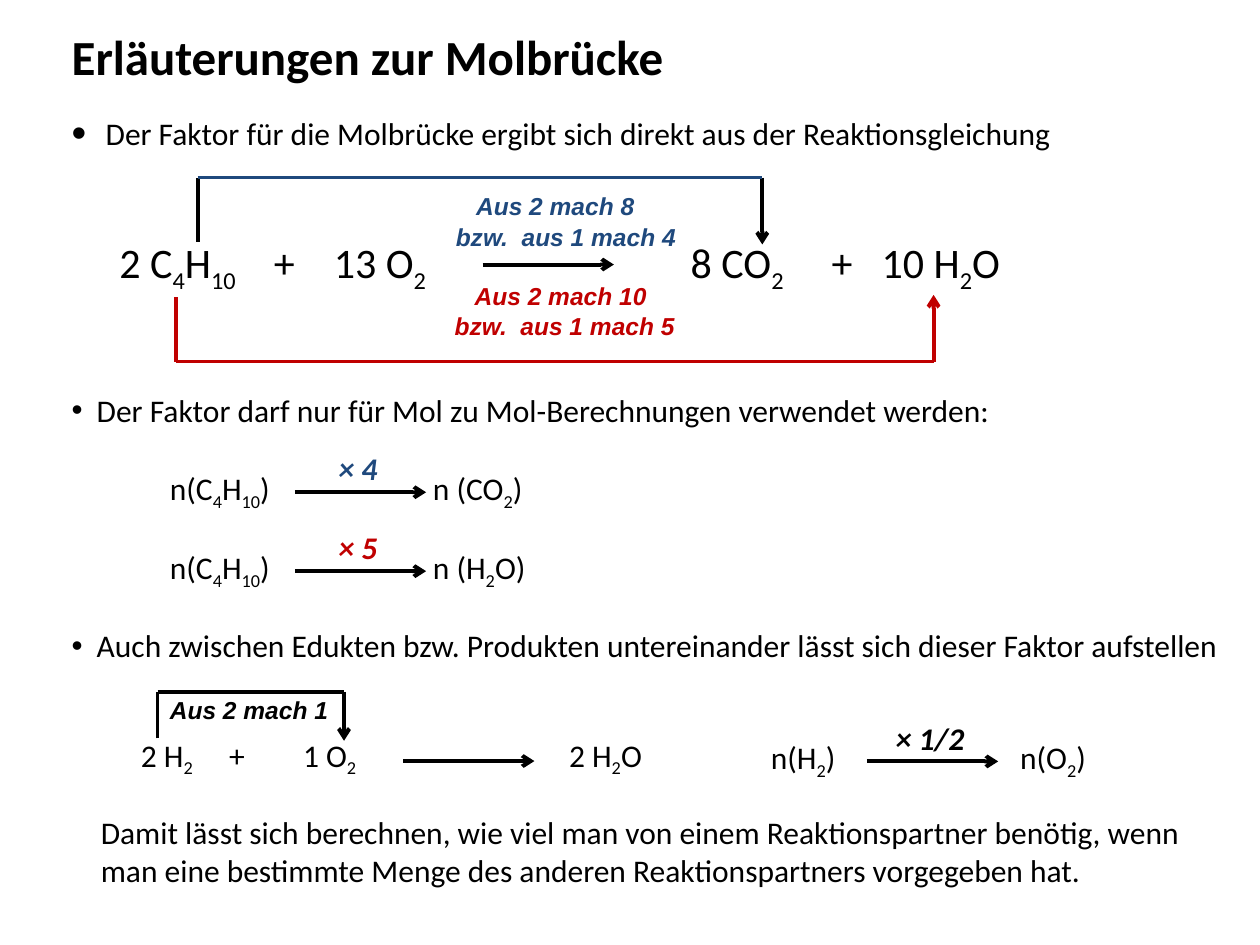
from dataclasses import dataclass

from lxml.etree import SubElement
from pptx import Presentation
from pptx.dml.color import RGBColor
from pptx.enum.shapes import MSO_CONNECTOR
from pptx.enum.text import MSO_ANCHOR, MSO_AUTO_SIZE, PP_ALIGN
from pptx.oxml.ns import qn
from pptx.util import Pt


@dataclass(frozen=True)
class Theme:
    black: RGBColor = RGBColor(0x00, 0x00, 0x00)
    blue: RGBColor = RGBColor(0x1F, 0x49, 0x7D)
    red: RGBColor = RGBColor(0xC0, 0x00, 0x00)
    text_font: str = "Calibri"
    label_font: str = "Arial"
    title_size: int = 28
    equation_size: int = 24
    text_size: int = 18
    label_size: int = 14
    leg_width: float = 2.25
    bar_width: float = 2
    arrow_length: float = 75


@dataclass(frozen=True)
class Box:
    left: float
    top: float
    width: float
    height: float

    def inner(self, left, top, width, height):
        return Box(self.left + left, self.top + top, width, height)


THEME = Theme()


def text_format(size, color=THEME.black, name=THEME.text_font, bold=False, italic=False):
    return {"size": Pt(size), "color": color, "name": name, "bold": bold, "italic": italic}


TITLE = text_format(THEME.title_size, bold=True)
BODY = text_format(THEME.text_size)
EQUATION = text_format(THEME.equation_size)


def label_format(color):
    return text_format(THEME.label_size, color, THEME.label_font, True, True)


def factor_format(color):
    return text_format(THEME.text_size, color, bold=True, italic=True)


def apply_format(font, values):
    for key, value in values.items():
        if key == "color":
            font.color.rgb = value
        else:
            setattr(font, key, value)


def place(shape, box):
    for side in ("left", "top", "width", "height"):
        setattr(shape, side, Pt(getattr(box, side)))


def write(shape, lines, values, wrap=True):
    frame = shape.text_frame
    frame.word_wrap = wrap
    frame.auto_size = MSO_AUTO_SIZE.NONE
    frame.vertical_anchor = MSO_ANCHOR.TOP
    for index, line in enumerate(lines):
        para = frame.add_paragraph() if index else frame.paragraphs[0]
        para.alignment = PP_ALIGN.LEFT
        para.space_before = Pt(0)
        for position, piece in enumerate(line.split("~")):
            if piece:
                span = para.add_run()
                span.text = piece
                apply_format(span.font, values)
                if position % 2:
                    span.font._element.set("baseline", "-25000")
    return frame


def add_text(page, box, text, values, wrap=False):
    shape = page.shapes.add_textbox(Pt(0), Pt(0), Pt(1), Pt(1))
    place(shape, box)
    return write(shape, [text], values, wrap)


def add_formula(page, box, terms, stops, values):
    frame = add_text(page, box, "\t".join(terms), values, wrap=True)
    tabs = SubElement(frame.paragraphs[0]._p.get_or_add_pPr(), qn("a:tabLst"))
    for stop in stops:
        SubElement(tabs, qn("a:tab"), pos=str(Pt(stop)), algn="l")


def add_line(page, start, end, color, width=THEME.leg_width, arrow=False):
    line = page.shapes.add_connector(
        MSO_CONNECTOR.STRAIGHT, *(Pt(value) for value in (*start, *end)))
    line.line.color.rgb = color
    line.line.width = Pt(width)
    if arrow:
        SubElement(line.line._get_or_add_ln(), qn("a:tailEnd"), type="arrow")
    SubElement(line._element.spPr, qn("a:effectLst"))


def add_arrow(page, left, top):
    add_line(page, (left, top), (left + THEME.arrow_length, top), THEME.black, arrow=True)


def add_bridge(page, box, leg_color, bar_color, below=False):
    right, bottom = box.left + box.width, box.top + box.height
    bar, tip, gap = (bottom, box.top, 1.4) if below else (box.top, bottom, -1.4)
    add_line(page, (box.left, tip + gap), (box.left, bar), leg_color)
    add_line(page, (right, bar), (right, tip), leg_color, arrow=True)
    add_line(page, (box.left, bar), (right, bar), bar_color, THEME.bar_width)


def set_bullet(para, indent, percent):
    properties = para._p.get_or_add_pPr()
    properties.set("marL", str(Pt(indent)))
    properties.set("indent", str(Pt(-indent)))
    if indent:
        SubElement(properties, qn("a:buSzPct"), val=str(percent * 1000))
        SubElement(properties, qn("a:buFont"), typeface="Arial")
        SubElement(properties, qn("a:buChar"), char="•")
    else:
        SubElement(properties, qn("a:buNone"))


def add_headings(page, box):
    place(page.shapes.title, box.inner(0, 0, 357, 41))
    write(page.shapes.title, ["Erläuterungen zur Molbrücke"], TITLE)
    entries = [
        (0, 50.2, 576, 19.4, 133,
         ["Der Faktor für die Molbrücke ergibt sich direkt aus der Reaktionsgleichung"]),
        (0, 208.2, 546, 14.3, 100,
         ["Der Faktor darf nur für Mol zu Mol-Berechnungen verwendet werden:"]),
        (0, 342.8, 675, 14.3, 100,
         ["Auch zwischen Edukten bzw. Produkten untereinander lässt sich dieser Faktor aufstellen"]),
        (16.6, 449.5, 645, 0, 100,
         ["Damit lässt sich berechnen, wie viel man von einem Reaktionspartner benötig, wenn",
          "man eine bestimmte Menge des anderen Reaktionspartners vorgegeben hat."]),
    ]
    bodies = [page.placeholders[index] for index in (1, 2, 3, 4)]
    for body, (left, top, width, indent, percent, lines) in zip(bodies, entries):
        place(body, box.inner(left, top, width, 7 + 22 * len(lines)))
        for para in write(body, lines, BODY).paragraphs:
            set_bullet(para, indent, percent)


def add_reaction(page, box):
    add_formula(page, box.inner(0, 30.3, 585, 36),
                ["2 C~4~H~10~", "+", "13 O~2~", "8 CO~2~", "+", "10 H~2~O"],
                [88.2, 122.5, 326.4, 407, 435.5], EQUATION)
    labels = [
        (203.8, 4.3, 105, "Aus 2 mach 8", THEME.blue),
        (192.2, 21.6, 141, "bzw.  aus 1 mach 4", THEME.blue),
        (203, 55.5, 113, "Aus 2 mach 10", THEME.red),
        (191.5, 72.7, 141, "bzw.  aus 1 mach 5", THEME.red),
    ]
    for left, top, width, text, color in labels:
        add_text(page, box.inner(left, top, width, 24.5), text, label_format(color))
    add_arrow(page, box.left + 214.6, box.top + 49.7)
    add_bridge(page, box.inner(51.8, 0, 322.6, 38.2), THEME.black, THEME.blue)
    add_bridge(page, box.inner(39.6, 67, 432.7, 38.2), THEME.red, THEME.red, below=True)


def add_conversion(page, box, terms, stop, factor, color, arrow_left, factor_width):
    add_formula(page, box, terms, [stop], BODY)
    add_arrow(page, box.left + arrow_left, box.top + 17)
    offset = arrow_left + (THEME.arrow_length - factor_width) / 2 + 1
    add_text(page, box.inner(offset, -11, factor_width, 29), factor, factor_format(color))


def add_water_reaction(page, box):
    add_formula(page, box.inner(0, 21.5, 317, 29),
                ["2 H~2~", "+", "1 O~2~", "2 H~2~O"], [50.5, 92.7, 244.7], BODY)
    add_arrow(page, box.left + 157, box.top + 39.6)
    add_bridge(page, box.inner(16.6, 0, 106.6, 28), THEME.black, THEME.black)
    add_text(page, box.inner(16.6, -1.4, 105, 24.5), "Aus 2 mach 1", label_format(THEME.black))


def main():
    deck = Presentation()
    deck.slide_width, deck.slide_height = Pt(720), Pt(540)
    page = deck.slides.add_slide(deck.slide_layouts[4])
    add_headings(page, Box(33.8, 11.5, 675, 505))
    add_reaction(page, Box(61.2, 101.5, 585, 105))
    conversions = [("n (CO~2~)", "× 4", THEME.blue), ("n (H~2~O)", "× 5", THEME.red)]
    for row, (product, factor, color) in enumerate(conversions):
        add_conversion(page, Box(90, 264.3 + 45.1 * row, 226, 29),
                       ["n(C~4~H~10~)", product], 150.3, factor, color, 78.5, 41)
    add_water_reaction(page, Box(73.4, 395.3, 317, 51))
    add_conversion(page, Box(433.4, 418.1, 205, 29), ["n(H~2~)", "n(O~2~)"],
                   142.5, "× 1/2", THEME.black, 62, 58)
    deck.save("out.pptx")


if __name__ == "__main__":
    main()
